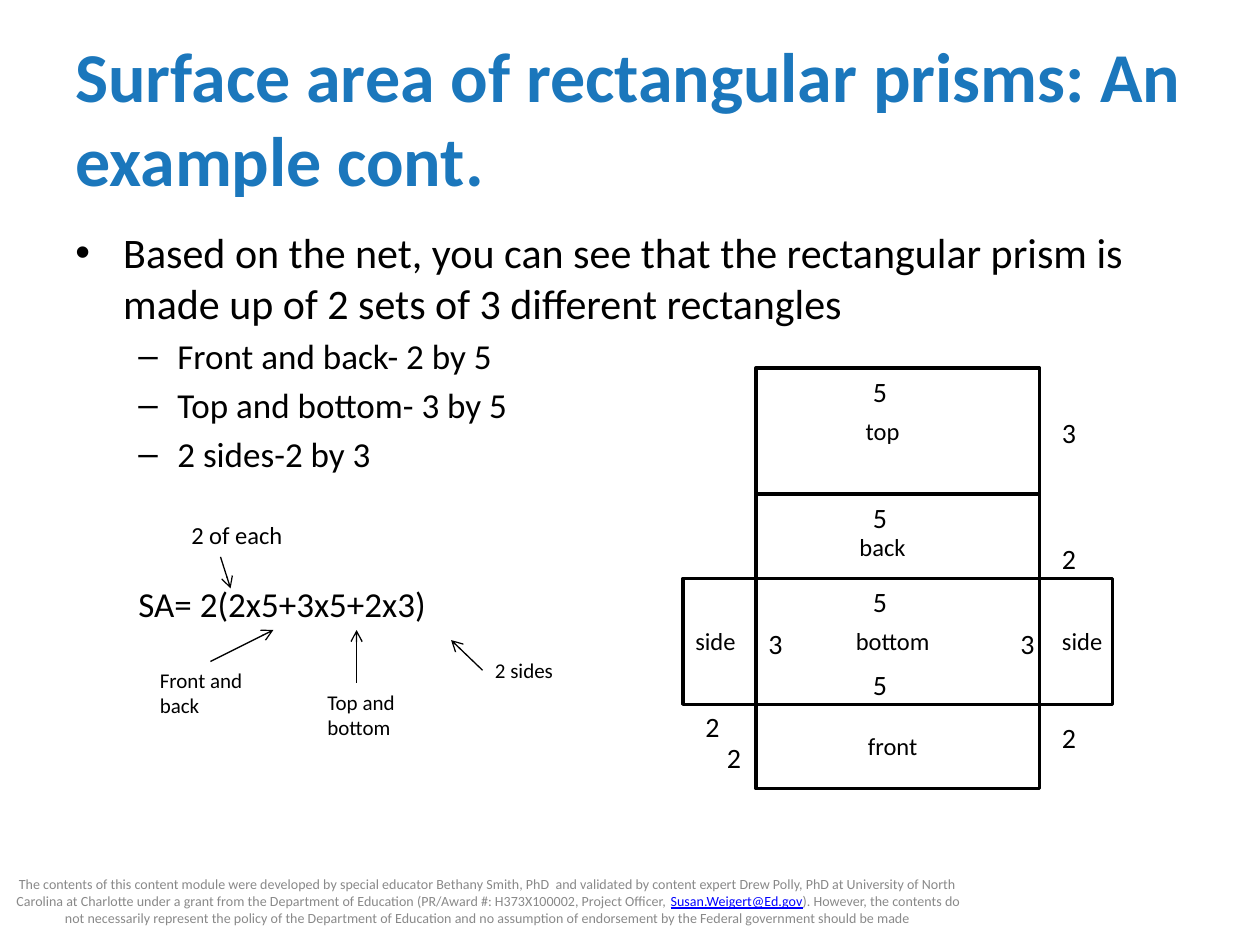
"""Builds the slide on the surface area of a rectangular prism and its net."""
from dataclasses import dataclass

from lxml import etree
from pptx import Presentation, util as u
from pptx.dml.color import RGBColor
from pptx.enum import shapes, text
from pptx.oxml.ns import qn


@dataclass(frozen=True)
class Theme:
    font: str = "Calibri"
    title: str = "1B77BC"
    ink: str = "000000"
    paper: str = "FFFFFF"
    muted: str = "898989"
    link: str = "0000FF"
    title_pt: int = 40
    body_pt: int = 24
    sub_pt: int = 20
    number_pt: int = 16
    label_pt: int = 14
    note_pt: int = 12
    footer_pt: int = 8
    arrow_pt: float = 0.75
    edge_pt: int = 2


class Deck:
    def __init__(self, prs, theme):
        self.t = theme
        self.s = prs.slides.add_slide(prs.slide_layouts[6])
        self.shapes = self.s.shapes

    def group(self):
        self.shapes = self.s.shapes.add_group_shape().shapes

    def run(self, p, words, size, color=None, bold=False, underline=False):
        r = p.add_run()
        r.text = words
        f = r.font
        f.name, f.size, f.bold, f.underline = self.t.font, u.Pt(size), bold, underline
        f.color.rgb = RGBColor.from_string(color or self.t.ink)

    def box(self, x, y, w, h, anchor=text.MSO_ANCHOR.TOP):
        sp = self.shapes.add_textbox(*map(u.Inches, (x, y, w, h)))
        tf = sp.text_frame
        tf.word_wrap = True
        tf.vertical_anchor = anchor
        return tf

    def label(self, words, x, y, w, h, size, align=text.PP_ALIGN.LEFT):
        p = self.box(x, y, w, h).paragraphs[0]
        p.alignment = align
        self.run(p, words, size)

    def bullets(self, x, y, w, h, items):
        tf = self.box(x, y, w, h)
        for i, (words, mark, size, margin, hang) in enumerate(items):
            p = tf.paragraphs[0] if i == 0 else tf.add_paragraph()
            pPr = p._p.get_or_add_pPr()
            pPr.set("marL", str(u.Inches(margin)))
            pPr.set("indent", str(u.Inches(-hang)))
            etree.SubElement(pPr, qn("a:buFont")).set("typeface", "Arial")
            etree.SubElement(pPr, qn("a:buChar")).set("char", mark)
            if i:
                p.space_before = u.Pt(size * 0.2)
            self.run(p, words, size)

    def rect(self, x, y, w, h):
        sp = self.shapes.add_shape(shapes.MSO_SHAPE.RECTANGLE, *map(u.Inches, (x, y, w, h)))
        sp.shadow.inherit = False
        sp.fill.solid()
        sp.fill.fore_color.rgb = RGBColor.from_string(self.t.paper)
        sp.line.color.rgb = RGBColor.from_string(self.t.ink)
        sp.line.width = u.Pt(self.t.edge_pt)

    def arrow(self, *ends):
        c = self.shapes.add_connector(shapes.MSO_CONNECTOR.STRAIGHT, *map(u.Inches, ends))
        c.line.color.rgb = RGBColor.from_string(self.t.ink)
        c.line.width = u.Pt(self.t.arrow_pt)
        etree.SubElement(c.line._get_or_add_ln(), qn("a:tailEnd")).set("type", "arrow")
        etree.SubElement(c._element.spPr, qn("a:effectLst"))


def add_text(d):
    t = d.t
    middle = text.MSO_ANCHOR.MIDDLE
    p = d.box(0.5, 0.3, 9, 1.25, middle).paragraphs[0]
    d.run(p, "Surface area of rectangular prisms: An example cont.", t.title_pt, t.title, bold=True)

    lead = ("Based on the net, you can see that the rectangular prism is "
            "made up of 2 sets of 3 different rectangles")
    faces = ("Front and back- 2 by 5", "Top and bottom- 3 by 5", "2 sides-2 by 3")
    d.bullets(0.5, 1.75, 9, 2.15, [(lead, "•", t.body_pt, 0.38, 0.38)]
              + [(face, "–", t.sub_pt, 0.81, 0.31) for face in faces])

    p = d.box(0, 6.95, 7.75, 0.4, middle).paragraphs[0]
    p.alignment = text.PP_ALIGN.CENTER
    d.run(p, "The contents of this content module were developed by special educator "
          "Bethany Smith, PhD  and validated by content expert Drew Polly, PhD at "
          "University of North Carolina at Charlotte under a grant from the Department "
          "of Education (PR/Award #: H373X100002, Project Officer, ", t.footer_pt, t.muted)
    d.run(p, "Susan.Weigert@Ed.gov", t.footer_pt, t.link, underline=True)
    d.run(p, "). However, the contents do not necessarily represent the policy of the "
          "Department of Education and no assumption of endorsement by the Federal "
          "government should be made", t.footer_pt, t.muted)


def add_formula(d):
    t = d.t
    d.label("SA= 2(2x5+3x5+2x3)", 1, 4.57, 3.5, 0.43, t.sub_pt)
    d.label("2 of each", 1.42, 4.08, 1, 0.34, t.label_pt)
    for words, x, y, h in (("Front and back", 1.17, 5.25, 0.5),
                           ("Top and bottom", 2.5, 5.42, 0.5),
                           ("2 sides", 3.83, 5.17, 0.3)):
        d.label(words, x, y, 1, h, t.note_pt)
    for ends in ((1.67, 5.25, 2.17, 5), (2.83, 5.42, 2.83, 5),
                 (3.83, 5.32, 3.58, 5.08), (1.75, 4.42, 1.83, 4.67)):
        d.arrow(*ends)


def add_net(d):
    t = d.t
    left, width, flap = 6, 2.25, 0.58
    long, short = 1, 0.67
    right = left + width
    d.group()
    y = 2.92
    tops = []
    for height in (long, short, long, short):
        d.rect(left, y, width, height)
        tops.append(y)
        y += height
    bottom = tops[2]
    for x in (left - flap, right):
        d.rect(x, bottom, flap, long)

    for words, x, y in (("top", 6.42, 3.25), ("back", 6.42, 4.17),
                        ("bottom", 6.5, 4.92), ("front", 6.5, 5.75)):
        d.label(words, x, y, 1.17, 0.34, t.label_pt, text.PP_ALIGN.CENTER)
    for x in (left - flap, right + 0.08):
        d.label("side", x, 4.92, 1.17, 0.34, t.label_pt)

    lengths = {
        "5": [(6.83, y) for y in (*tops[:3], 5.25)],
        "3": [(8.33, 3.25), (8, 4.92), (6, 4.92)],
        "2": [(8.33, 4.25), (5.5, 5.58), (5.67, 5.83), (8.33, 5.67)],
    }
    for number, places in lengths.items():
        for x, y in places:
            d.label(number, x, y, 0.42, 0.37, t.number_pt)


def main():
    prs = Presentation()
    prs.slide_width, prs.slide_height = u.Inches(10), u.Inches(7.5)
    d = Deck(prs, Theme())
    add_text(d)
    add_formula(d)
    add_net(d)
    prs.save("out.pptx")


if __name__ == "__main__":
    main()
